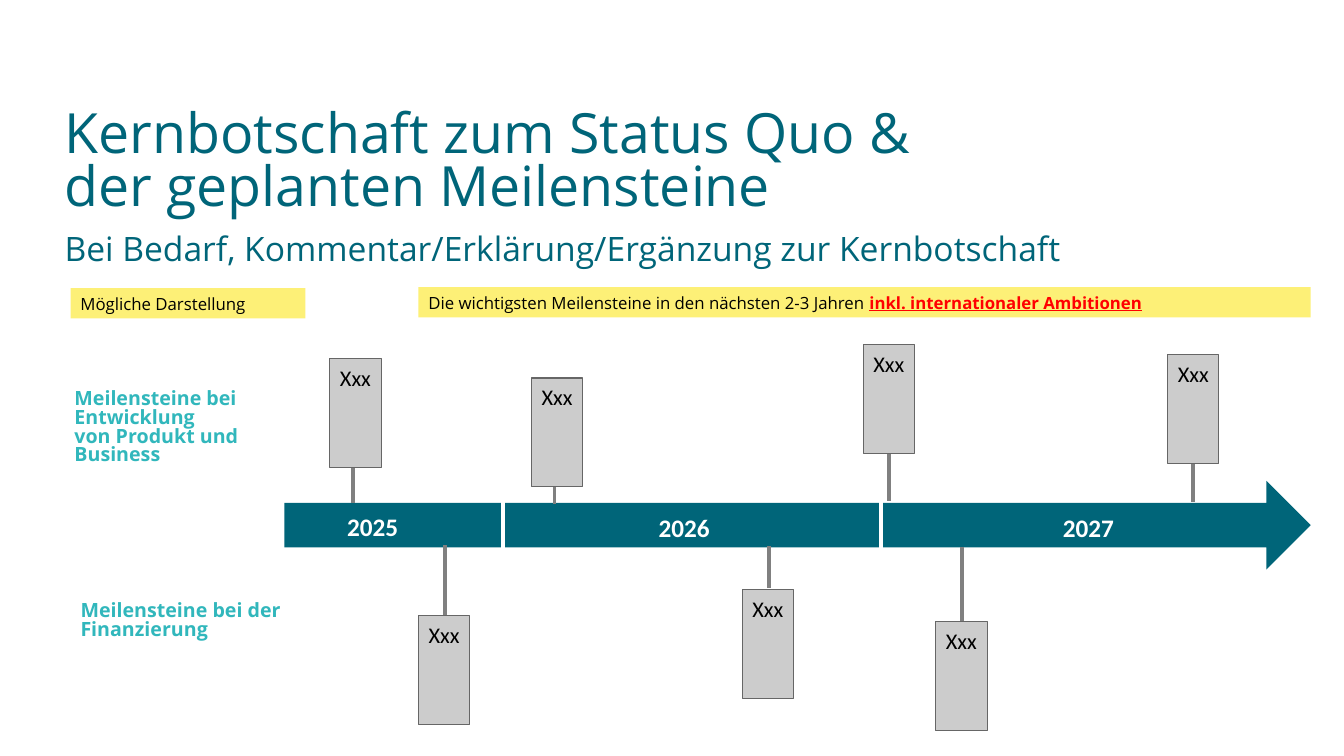
"""Build a milestone timeline slide on a grid of tenth-of-an-inch columns and rows."""
from dataclasses import dataclass

from lxml.etree import SubElement
from pptx import Presentation
from pptx.dml.color import RGBColor
from pptx.enum.shapes import MSO_CONNECTOR as Connector, MSO_SHAPE as Preset
from pptx.enum.text import MSO_ANCHOR as Anchor, MSO_AUTO_SIZE as AutoSize, PP_ALIGN as Align
from pptx.oxml.ns import qn
from pptx.shapes.autoshape import Shape
from pptx.slide import Slide
from pptx.text.text import Font, TextFrame
from pptx.util import Inches, Length, Pt


@dataclass(frozen=True)
class Theme:
    heading_font: str = "Open Sans"
    label_font: str = "Calibri"
    petrol: str = "006579"
    turquoise: str = "31B7BC"
    yellow: str = "FDF077"
    red: str = "FF0000"
    black: str = "000000"
    white: str = "FFFFFF"
    stem: str = "808080"
    card: str = "CCCCCC"
    card_edge: str = "666666"
    title_size: float = 39.6
    subtitle_size: float = 24
    year_size: float = 18
    card_size: float = 16
    topic_size: float = 14
    banner_size: float = 12
    stem_width: float = 2.75
    card_edge_width: float = 0.75


@dataclass(frozen=True)
class Area:
    column: float
    row: float
    columns: float
    rows: float

    def box(self) -> tuple[Length, Length, Length, Length]:
        return cells(self.column), cells(self.row), cells(self.columns), cells(self.rows)


@dataclass(frozen=True)
class Milestone:
    column: float
    row: float
    stem_column: float
    stem_top: float
    stem_rows: float = 8.5


@dataclass(frozen=True)
class Year:
    text: str
    column: float
    row: float


@dataclass(frozen=True)
class Topic:
    lines: tuple[str, ...]
    area: Area


@dataclass(frozen=True)
class Banner:
    text: str
    emphasis: str
    area: Area


THEME = Theme()
CELL = 0.1
CARD_COLUMNS, CARD_ROWS = 5.1, 10.8
TITLE = "Kernbotschaft zum Status Quo &\vder geplanten Meilensteine"
SUBTITLE = "Bei Bedarf, Kommentar/Erklärung/Ergänzung zur Kernbotschaft"
MILESTONES = (
    Milestone(32.7, 35.6, 35, 41.4),
    Milestone(52.7, 37.5, 55, 47, 3),
    Milestone(85.6, 34.2, 88.2, 41.2),
    Milestone(115.8, 35.2, 118.3, 41.3),
    Milestone(41.5, 61.1, 44.1, 54.1),
    Milestone(73.6, 58.5, 76.3, 54.2, 4.1),
    Milestone(92.8, 61.7, 95.4, 54.3),
)
YEARS = (Year("2025", 33.4, 50.2), Year("2026", 64.3, 50.3), Year("2027", 104.4, 50.3))
YEAR_DIVIDERS = (49.9, 87.4)
TOPICS = (
    Topic(("Meilensteine bei Entwicklung", "von Produkt und Business"), Area(6.4, 39.4, 26.4, 6.1)),
    Topic(("Meilensteine bei der Finanzierung",), Area(7, 58.6, 24.8, 6.1)),
)
BANNERS = (
    Banner("Mögliche Darstellung", "", Area(7, 28.6, 23.3, 3)),
    Banner("Die wichtigsten Meilensteine in den nächsten 2-3 Jahren ",
           "inkl. internationaler Ambitionen", Area(41.5, 28.5, 88.5, 3)),
)


def cells(count: float) -> Length:
    """Convert a number of grid cells to a length."""
    return Inches(count * CELL)


def style(font: Font, name: str, size: float, color: str, bold: bool = False) -> None:
    """Apply typeface, size, colour and weight."""
    font.name, font.size, font.bold = name, Pt(size), bold
    font.color.rgb = RGBColor.from_string(color)


def set_frame(frame: TextFrame, anchor: Anchor, wrap: bool = True) -> None:
    """Fix the anchoring and wrapping of a text frame."""
    frame.auto_size = AutoSize.NONE
    frame.vertical_anchor, frame.word_wrap = anchor, wrap


def add_heading(slide: Slide, index: int, text: str, area: Area, size: float, spacing: float) -> None:
    """Fill and place a template placeholder."""
    shape = slide.placeholders[index]
    shape.left, shape.top, shape.width, shape.height = area.box()
    set_frame(shape.text_frame, Anchor.TOP)
    shape.text_frame.text = text
    paragraph = shape.text_frame.paragraphs[0]
    properties = paragraph._p.get_or_add_pPr()
    properties.set("marL", "0")
    properties.set("indent", "0")
    SubElement(properties, qn("a:buNone"))
    paragraph.alignment, paragraph.line_spacing = Align.LEFT, spacing
    paragraph.space_before = Pt(0)
    style(paragraph.font, THEME.heading_font, size, THEME.petrol)


def add_block(slide: Slide, preset: Preset, area: Area, fill: str, edge: str = "") -> Shape:
    """Draw a flat filled shape with an optional outline."""
    shape = slide.shapes.add_shape(preset, *area.box())
    shape.shadow.inherit = False
    shape.fill.solid()
    shape.fill.fore_color.rgb = RGBColor.from_string(fill)
    if edge:
        shape.line.color.rgb = RGBColor.from_string(edge)
        shape.line.width = Pt(THEME.card_edge_width)
    else:
        shape.line.fill.background()
    return shape


def add_vertical(slide: Slide, column: float, top: float, rows: float, color: str) -> None:
    """Draw a vertical line."""
    x = cells(column)
    line = slide.shapes.add_connector(Connector.STRAIGHT, x, cells(top + rows), x, cells(top))
    line.line.color.rgb = RGBColor.from_string(color)
    line.line.width = Pt(THEME.stem_width)
    SubElement(line._element.spPr, qn("a:effectLst"))


def add_label(shape: Shape, text: str, size: float, color: str, bold: bool = False) -> None:
    """Write a centred single-line label."""
    set_frame(shape.text_frame, Anchor.TOP, wrap=False)
    paragraph = shape.text_frame.paragraphs[0]
    paragraph.text, paragraph.alignment = text, Align.CENTER
    paragraph.space_after = Pt(6)
    style(paragraph.font, THEME.label_font, size, color, bold)


def add_topic(slide: Slide, topic: Topic) -> None:
    """Write the heading of one milestone row."""
    frame = slide.shapes.add_textbox(*topic.area.box()).text_frame
    set_frame(frame, Anchor.MIDDLE)
    frame.text = "\n".join(topic.lines)
    for paragraph in frame.paragraphs:
        paragraph.line_spacing = 0.8
        style(paragraph.font, THEME.heading_font, THEME.topic_size, THEME.turquoise, True)


def add_banner(slide: Slide, banner: Banner) -> None:
    """Draw a yellow note with optional emphasis."""
    frame = add_block(slide, Preset.RECTANGLE, banner.area, THEME.yellow).text_frame
    set_frame(frame, Anchor.MIDDLE)
    paragraph = frame.paragraphs[0]
    paragraph.text, paragraph.alignment = banner.text, Align.LEFT
    style(paragraph.runs[0].font, THEME.heading_font, THEME.banner_size, THEME.black)
    if banner.emphasis:
        run = paragraph.add_run()
        run.text, run.font.underline = banner.emphasis, True
        style(run.font, THEME.heading_font, THEME.banner_size, THEME.red, True)


def main() -> None:
    """Compose and save the slide."""
    presentation = Presentation()
    presentation.slide_width, presentation.slide_height = Inches(13.33), Inches(7.5)
    slide = presentation.slides.add_slide(presentation.slide_layouts[1])
    add_heading(slide, 0, TITLE, Area(5.4, 10.5, 115, 16), THEME.title_size, 0.8)
    add_heading(slide, 1, SUBTITLE, Area(5.4, 22.6, 112, 5.1), THEME.subtitle_size, 0.9)
    add_block(slide, Preset.RIGHT_ARROW, Area(28.2, 47.7, 101.8, 8.8), THEME.petrol)
    for stone in MILESTONES:
        add_vertical(slide, stone.stem_column, stone.stem_top, stone.stem_rows, THEME.stem)
        area = Area(stone.column, stone.row, CARD_COLUMNS, CARD_ROWS)
        card = add_block(slide, Preset.RECTANGLE, area, THEME.card, THEME.card_edge)
        add_label(card, "Xxx", THEME.card_size, THEME.black)
    for column in YEAR_DIVIDERS:
        add_vertical(slide, column, 49.8, 4.6, THEME.white)
    for year in YEARS:
        box = slide.shapes.add_textbox(*Area(year.column, year.row, 7.1, 4).box())
        add_label(box, year.text, THEME.year_size, THEME.white, True)
    for topic in TOPICS:
        add_topic(slide, topic)
    for banner in BANNERS:
        add_banner(slide, banner)
    presentation.save("out.pptx")


if __name__ == "__main__":
    main()
